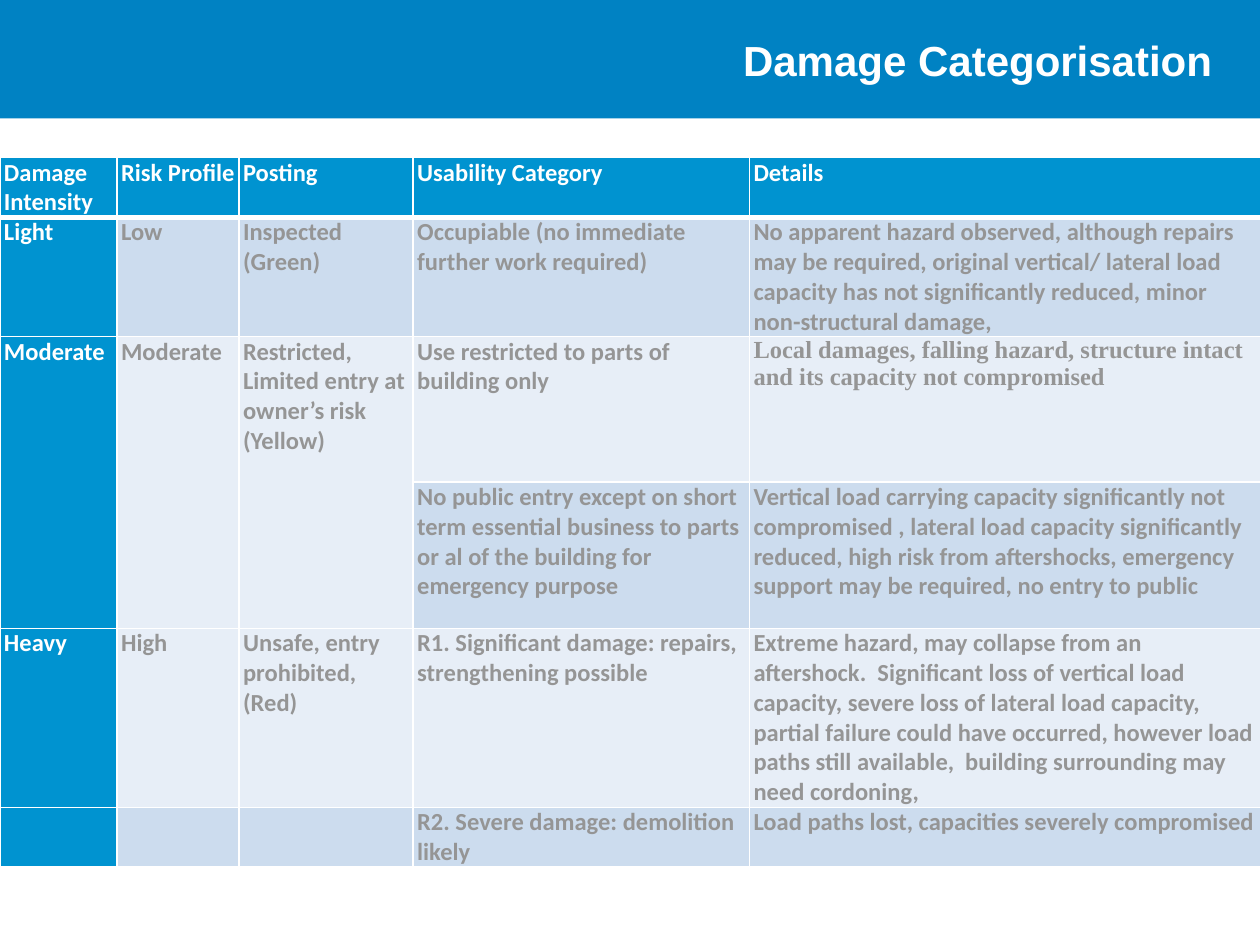
import pptx
import pptx.dml.color
import pptx.enum.shapes
import pptx.enum.text
import pptx.oxml
import pptx.oxml.ns
import pptx.util
from pptx.util import Cm

WHITE, GREY = "FFFFFF", "959595"
BAND, ACCENT = "0082C3", "0093D0"
DARK_ROW, LIGHT_ROW = "CCDCEE", "E7EEF7"
COLUMN_WIDTHS = [2.36, 2.46, 3.51, 6.78, 10.36]
ROW_HEIGHTS = [1.19, 2.4, 2.93, 2.95, 3.61, 1.19]
ROW_FILLS = [ACCENT, DARK_ROW, LIGHT_ROW, DARK_ROW, LIGHT_ROW, DARK_ROW]
MODERATE_ROW = 2
TEXTS = [
    ["Damage Intensity", "Risk Profile", "Posting", "Usability Category", "Details"],
    ["Light", "Low", "Inspected\n(Green)",
     "Occupiable (no immediate further work required)",
     "No apparent hazard observed, although repairs may be required, original vertical/ "
     "lateral load capacity has not significantly reduced, minor non-structural damage,"],
    ["Moderate", "Moderate", "Restricted, Limited entry at owner’s risk (Yellow)",
     "Use restricted to parts of building only",
     "Local damages, falling hazard, structure intact and its capacity not compromised"],
    ["", "", "",
     "No public entry except on short term essential business to parts or al of the "
     "building for emergency purpose",
     "Vertical load carrying capacity significantly not compromised , lateral load capacity "
     "significantly reduced, high risk from aftershocks, emergency support may be required, "
     "no entry to public"],
    ["Heavy", "High", "Unsafe, entry prohibited, (Red)",
     "R1. Significant damage: repairs, strengthening possible",
     "Extreme hazard, may collapse from an aftershock.  Significant loss of vertical load "
     "capacity, severe loss of lateral load capacity, partial failure could have occurred, "
     "however load paths still available,  building surrounding may need cordoning,"],
    ["", "", "", "R2. Severe damage: demolition likely",
     "Load paths lost, capacities severely compromised"],
]


def rgb(value):
    """Return the colour for a hex string."""
    return pptx.dml.color.RGBColor.from_string(value)


def apply(target, values):
    """Set each attribute in values on the target."""
    for name, value in values.items():
        setattr(target, name, value)


def style_text(frame, font, size, color):
    """Format every run of a text frame in bold."""
    for para in frame.paragraphs:
        for span in para.runs:
            apply(span.font, {"name": font, "size": pptx.util.Pt(size), "bold": True})
            span.font.color.rgb = rgb(color)


def add_header(page, left, top, width, height):
    """Place the coloured band with the title at its right."""
    title = page.shapes.title
    band = page.shapes.add_shape(
        pptx.enum.shapes.MSO_SHAPE.RECTANGLE, left, top, width, height)
    band.shadow.inherit = False
    band.fill.solid()
    band.fill.fore_color.rgb = rgb(BAND)
    band.line.fill.background()
    title.element.addprevious(band.element)

    indent, margin = Cm(5.54), Cm(0.71)
    apply(title, {"left": left + indent, "top": top,
                  "width": width - indent - margin, "height": height})
    frame = title.text_frame
    apply(frame, {"text": "Damage Categorisation", "word_wrap": True,
                  "auto_size": pptx.enum.text.MSO_AUTO_SIZE.NONE,
                  "vertical_anchor": pptx.enum.text.MSO_ANCHOR.MIDDLE})
    frame.paragraphs[0].alignment = pptx.enum.text.PP_ALIGN.RIGHT
    style_text(frame, "Arial", 24, WHITE)


def add_borders(cell, widths):
    """Draw white cell borders with the given point width for each side."""
    properties = cell._tc.get_or_add_tcPr()
    for side, width in widths.items():
        properties.append(pptx.oxml.parse_xml(
            f'<a:ln{side} {pptx.oxml.ns.nsdecls("a")} w="{pptx.util.Pt(width)}">'
            f'<a:solidFill><a:srgbClr val="{WHITE}"/></a:solidFill></a:ln{side}>'))


def add_damage_table(page, left, top):
    """Place the table of damage categories."""
    table = page.shapes.add_table(
        len(ROW_HEIGHTS), len(COLUMN_WIDTHS), left, top,
        Cm(sum(COLUMN_WIDTHS)), Cm(sum(ROW_HEIGHTS))).table
    for column, width in zip(table.columns, COLUMN_WIDTHS):
        column.width = Cm(width)
    for row, height in zip(table.rows, ROW_HEIGHTS):
        row.height = Cm(height)
    for column in range(3):
        table.cell(MODERATE_ROW, column).merge(table.cell(MODERATE_ROW + 1, column))

    for row, texts in enumerate(TEXTS):
        for column, text in enumerate(texts):
            cell = table.cell(row, column)
            heading = row == 0 or column == 0
            apply(cell, {"text": text, "margin_left": Cm(0.08), "margin_right": Cm(0.08),
                         "margin_top": 0, "margin_bottom": 0})
            add_borders(cell, {"L": 1, "R": 1, "T": 3 if row == 1 else 1,
                               "B": 3 if row == 0 else 1})
            cell.fill.solid()
            cell.fill.fore_color.rgb = rgb(ACCENT if heading else ROW_FILLS[row])
            serif = (row, column) == (MODERATE_ROW, 4)
            style_text(cell.text_frame, "Times New Roman" if serif else "Calibri",
                       14, WHITE if heading else GREY)


def main():
    """Build and save the deck."""
    deck = pptx.Presentation()
    apply(deck, {"slide_width": Cm(25.4), "slide_height": Cm(19.05)})
    page = deck.slides.add_slide(deck.slide_layouts.get_by_name("Title Only"))
    add_header(page, 0, 0, deck.slide_width, Cm(2.39))
    add_damage_table(page, 0, Cm(3.18))
    deck.save("out.pptx")


if __name__ == "__main__":
    main()
